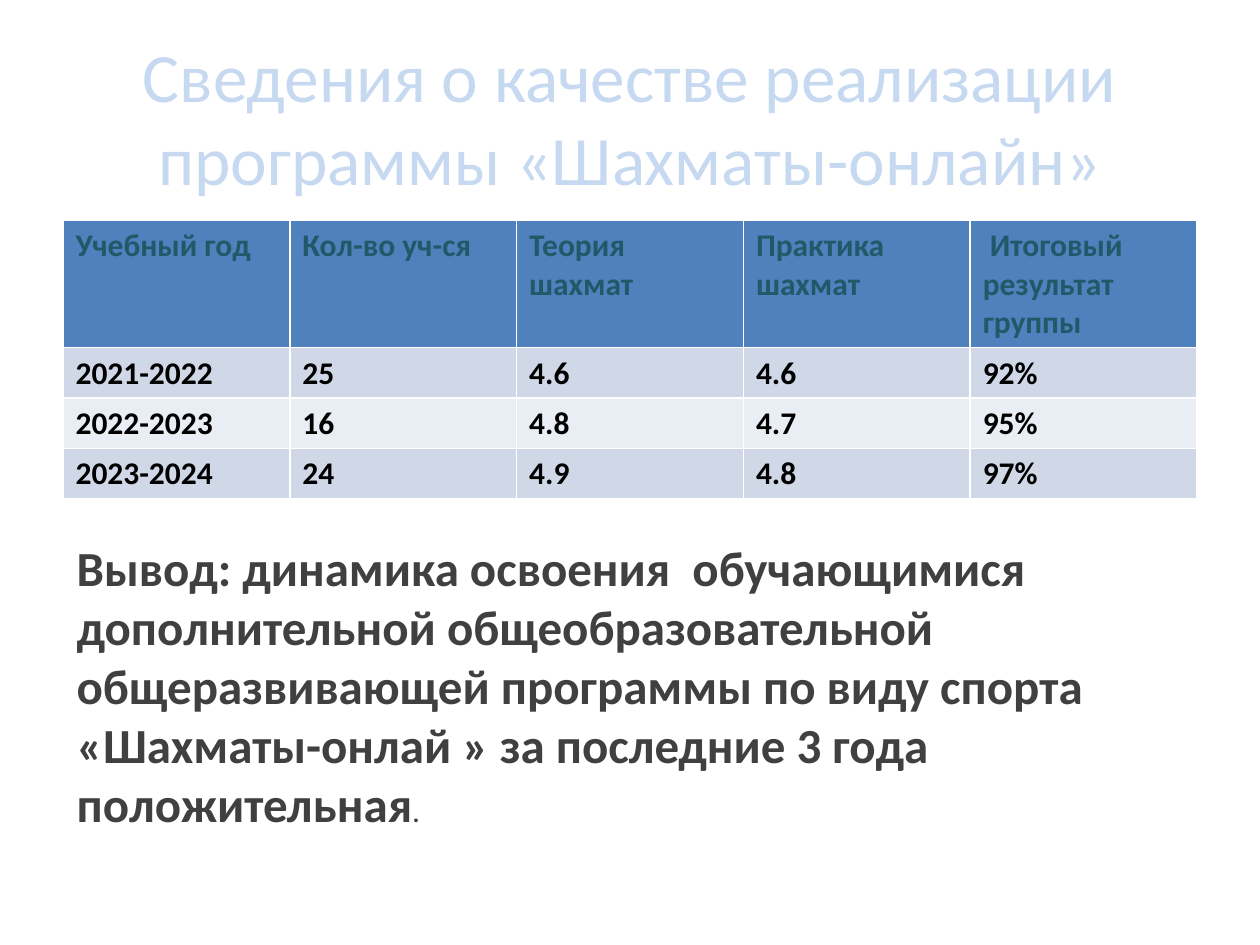
from dataclasses import dataclass

from pptx import Presentation
from pptx.dml.color import RGBColor
from pptx.enum.text import MSO_ANCHOR, MSO_AUTO_SIZE, PP_ALIGN
from pptx.slide import Slide
from pptx.util import Inches, Pt

COLORS = {
    "title": "C6D9F1",
    "header_text": "215968",
    "header_fill": "4F81BD",
    "odd_row": "D0D8E8",
    "even_row": "E9EDF4",
    "cell_text": "000000",
    "conclusion": "404040",
}

ROWS = [
    ["Учебный год", "Кол-во уч-ся", "Теория шахмат", "Практика шахмат", " Итоговый результат группы"],
    ["2021-2022", "25", "4.6", "4.6", "92%"],
    ["2022-2023", "16", "4.8", "4.7", "95%"],
    ["2023-2024", "24", "4.9", "4.8", "97%"],
]
COLUMN_WIDTH = 1.8
HEADER_HEIGHT = 1.01
ROW_HEIGHT = 0.4


@dataclass
class Span:
    text: str
    size: float
    color: str
    bold: bool = False


@dataclass
class TextBlock:
    left: float
    top: float
    width: float
    height: float
    spans: list[Span]
    frame_format: dict
    alignment: PP_ALIGN = PP_ALIGN.LEFT


TEXT_BLOCKS = [
    TextBlock(
        0.5, 0.3, 9, 1.25,
        [Span("Сведения о качестве реализации программы «Шахматы-онлайн»", 39.6, "title")],
        {"word_wrap": True, "vertical_anchor": MSO_ANCHOR.MIDDLE},
        PP_ALIGN.CENTER,
    ),
    TextBlock(
        0.51, 4.22, 8.98, 2.46,
        [
            Span(
                "Вывод: динамика освоения  обучающимися дополнительной "
                "общеобразовательной общеразвивающей программы по виду спорта "
                "«Шахматы-онлай » за последние 3 года положительная",
                28, "conclusion", True,
            ),
            Span(".", 18, "conclusion"),
        ],
        {"word_wrap": True, "auto_size": MSO_AUTO_SIZE.SHAPE_TO_FIT_TEXT},
    ),
]


def add_span(para, span: Span) -> None:
    run = para.add_run()
    run.text = span.text
    font_format = {"name": "Calibri", "size": Pt(span.size), "bold": span.bold}
    for name, value in font_format.items():
        setattr(run.font, name, value)
    run.font.color.rgb = RGBColor.from_string(COLORS[span.color])


def add_text_block(page: Slide, block: TextBlock) -> None:
    box = page.shapes.add_textbox(
        Inches(block.left), Inches(block.top), Inches(block.width), Inches(block.height)
    )
    for name, value in block.frame_format.items():
        setattr(box.text_frame, name, value)
    para = box.text_frame.paragraphs[0]
    para.alignment = block.alignment
    for span in block.spans:
        add_span(para, span)


def add_results_table(page: Slide) -> None:
    column_count = len(ROWS[0])
    heights = [HEADER_HEIGHT] + [ROW_HEIGHT] * (len(ROWS) - 1)
    table = page.shapes.add_table(
        len(ROWS), column_count, Inches(0.5), Inches(1.75),
        Inches(COLUMN_WIDTH * column_count), Inches(sum(heights)),
    ).table
    for column in table.columns:
        column.width = Inches(COLUMN_WIDTH)
    for row_index, (texts, height) in enumerate(zip(ROWS, heights)):
        table.rows[row_index].height = Inches(height)
        if row_index == 0:
            fill, color = "header_fill", "header_text"
        else:
            fill, color = ("odd_row" if row_index % 2 else "even_row"), "cell_text"
        for column_index, text in enumerate(texts):
            cell = table.cell(row_index, column_index)
            cell.fill.solid()
            cell.fill.fore_color.rgb = RGBColor.from_string(COLORS[fill])
            add_span(cell.text_frame.paragraphs[0], Span(text, 18, color, True))


def main() -> None:
    deck = Presentation()
    deck.slide_width = Inches(10)
    deck.slide_height = Inches(7.5)
    page = deck.slides.add_slide(deck.slide_layouts[6])
    title, conclusion = TEXT_BLOCKS
    add_text_block(page, title)
    add_results_table(page)
    add_text_block(page, conclusion)
    deck.save("out.pptx")


if __name__ == "__main__":
    main()
